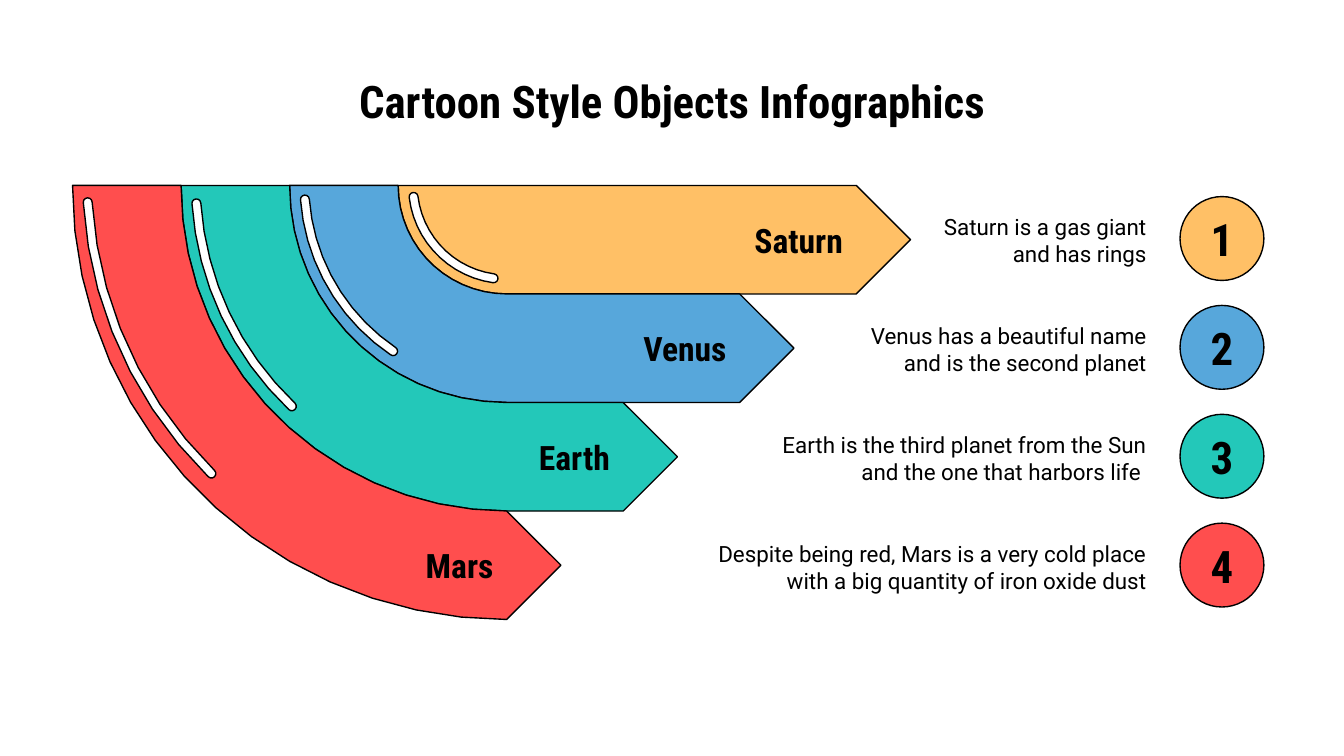
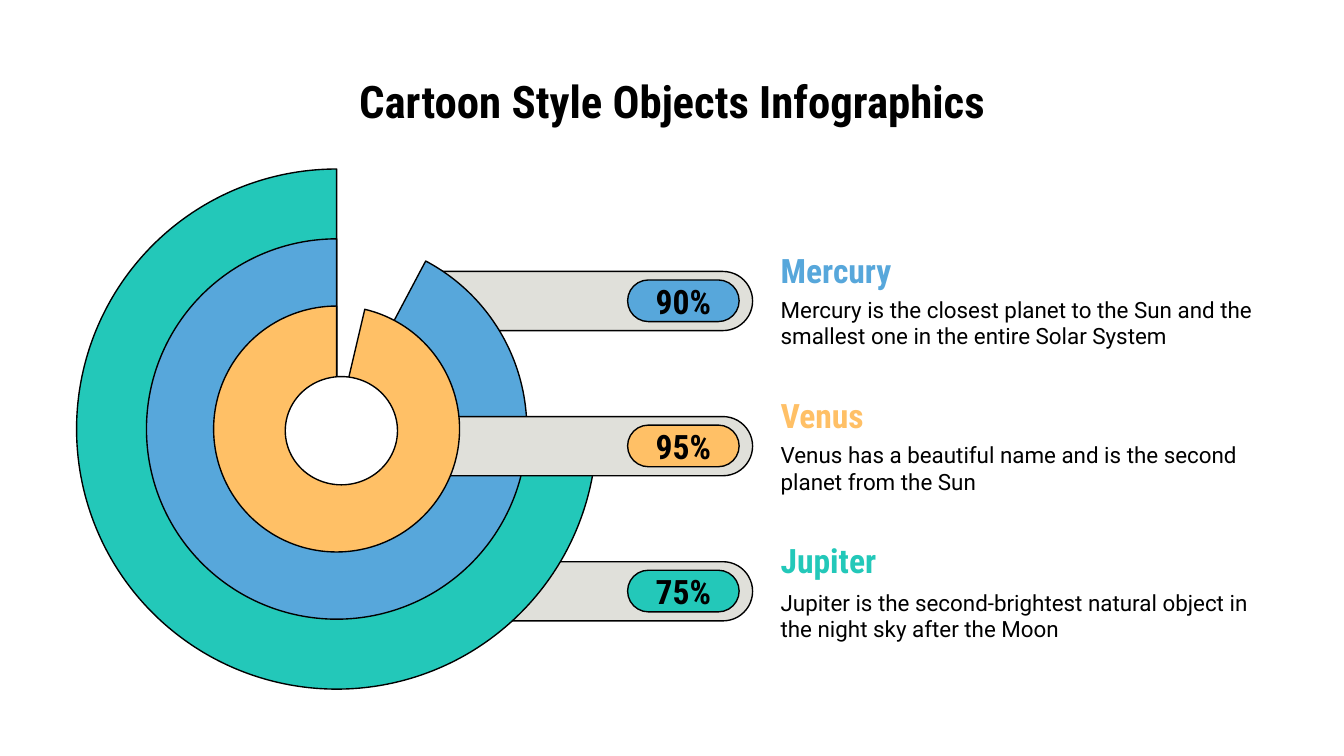
from dataclasses import dataclass
from math import ceil, cos, pi, radians, sin

from pptx import Presentation
from pptx.dml.color import RGBColor
from pptx.enum import shapes, text
from pptx.util import Emu, Inches, Pt

# The slide is a grid of 100 columns; rows are as tall as columns are wide.
WIDTH = Inches(10)
HEIGHT = Inches(5.625)
UNIT = WIDTH / 100

COLORS = {
    "ink": "000000",
    "paper": "FFFFFF",
    "bar": "E0E0DA",
    "yellow": "FFC066",
    "blue": "57A7DB",
    "teal": "23C8B9",
    "red": "FF4E4E",
}
FONTS = {
    "title": {"name": "Roboto Condensed", "size": Pt(24), "bold": True},
    "label": {"name": "Roboto Condensed", "size": Pt(18), "bold": True},
    "body": {"name": "Roboto", "size": Pt(12), "bold": False},
}
FRAME = {
    "word_wrap": True,
    "margin_left": Inches(0.1),
    "margin_right": Inches(0.1),
    "margin_top": Inches(0.1),
    "margin_bottom": Inches(0.1),
}
LEFT, CENTER, RIGHT = text.PP_ALIGN.LEFT, text.PP_ALIGN.CENTER, text.PP_ALIGN.RIGHT
TOP, MIDDLE = text.MSO_ANCHOR.TOP, text.MSO_ANCHOR.MIDDLE
Point = tuple[float, float]


@dataclass(frozen=True)
class Box:
    left: float
    top: float
    width: float
    height: float

    def emu(self) -> list[Emu]:
        return [Emu(round(n * UNIT)) for n in (self.left, self.top, self.width, self.height)]


@dataclass(frozen=True)
class Arrow:
    """A curved arrow; its glint runs between two angles and drifts inwards."""
    planet: str
    fact: str
    fact_width: float
    color: str
    glint_from: float
    glint_to: float
    drift: float


@dataclass(frozen=True)
class Ring:
    planet: str
    share: str
    fact: str
    color: str
    row: int
    diameter: float
    start_angle: float
    bar_left: float
    fact_drop: float


ARROWS = [
    Arrow("Saturn", "Saturn is a gas giant and has rings", 18.5, "yellow", 7, 82, 0),
    Arrow("Venus", "Venus has a beautiful name and is the second planet",
          23.2, "blue", 4, 55.6, 0.1),
    Arrow("Earth", "Earth is the third planet from the Sun and the one that harbors life ",
          29.4, "teal", 3.3, 45.8, 0.2),
    Arrow("Mars", "Despite being red, Mars is a very cold place with a big quantity "
          "of iron oxide dust", 35.4, "red", 2.3, 44.3, 0.5),
]
ARC_CENTER: Point = (37.7, 13.8)
ARC_RADIUS = 32.3
ARC_STEP = 6
BAND = ARC_RADIUS / len(ARROWS)
SHAFT_STEP = 8.67
GLINT_INSET = 1.1
GLINT_HALF = 0.33

# Listed from back to front.
RINGS = [
    Ring("Jupiter", "75%", "Jupiter is the second-brightest natural object in the night sky "
         "after the Moon", "teal", 2, 38.7, 0, 31.4, 1),
    Ring("Mercury", "90%", "Mercury is the closest planet to the Sun and the smallest one "
         "in the entire Solar System", "blue", 0, 28.3, 297.93, 30.6, 0.8),
    Ring("Venus", "95%", "Venus has a beautiful name and is the second planet from the Sun",
         "yellow", 1, 18.3, 283.25, 31.4, 0.8),
]
RING_CENTER: Point = (25.05, 31.93)
BAR_TOP, BAR_STEP, BAR_RIGHT, BAR_HEIGHT = 20.2, 10.8, 56, 4.4
TEXT_LEFT = 57.1


def rgb(color: str) -> RGBColor:
    return RGBColor.from_string(COLORS[color])


def paint(figure, color: str):
    figure.shadow.inherit = False
    figure.fill.solid()
    figure.fill.fore_color.rgb = rgb(color)
    figure.line.color.rgb = rgb("ink")
    figure.line.width = Pt(0.75)
    return figure


def write(figure, words: str, font: str, align=LEFT, anchor=TOP, color: str = "ink") -> None:
    frame = figure.text_frame
    for key, value in FRAME.items():
        setattr(frame, key, value)
    frame.vertical_anchor = anchor
    paragraph = frame.paragraphs[0]
    paragraph.alignment = align
    run = paragraph.add_run()
    run.text = words
    for key, value in FONTS[font].items():
        setattr(run.font, key, value)
    run.font.color.rgb = rgb(color)


def add_words(slide, box: Box, words: str, font: str, **layout) -> None:
    write(slide.shapes.add_textbox(*box.emu()), words, font, **layout)


def add_preset(slide, kind, box: Box, color: str, adjust: tuple[float, ...] = ()):
    figure = paint(slide.shapes.add_shape(kind, *box.emu()), color)
    for index, value in enumerate(adjust):
        figure.adjustments[index] = value
    return figure


def add_outline(slide, points: list[Point], color: str) -> None:
    corners = [(round(x * UNIT), round(y * UNIT)) for x, y in points]
    builder = slide.shapes.build_freeform(*corners[0], scale=1.0)
    builder.add_line_segments(corners[1:], close=True)
    paint(builder.convert_to_shape(), color)


def sweep(radius: float, end_radius: float, start: float, end: float) -> list[Point]:
    """Points round ARC_CENTER; angles run from its left side down to its foot."""
    if radius == end_radius == 0:
        return [ARC_CENTER]
    steps = ceil(abs(end - start) / ARC_STEP)
    points = []
    for i in range(steps + 1):
        part = i / steps
        r = radius + (end_radius - radius) * part
        angle = radians(start + (end - start) * part)
        points.append((ARC_CENTER[0] - r * cos(angle), ARC_CENTER[1] + r * sin(angle)))
    return points


def cap(radius: float, degrees: float, side: int) -> list[Point]:
    """Half circle that rounds a glint: side 1 at its end, -1 at its start."""
    angle = radians(degrees)
    x, y = ARC_CENTER[0] - radius * cos(angle), ARC_CENTER[1] + radius * sin(angle)
    points = []
    for i in range(1, 6):
        turn = pi * i / 6
        out, along = side * GLINT_HALF * cos(turn), side * GLINT_HALF * sin(turn)
        points.append((x - out * cos(angle) + along * sin(angle),
                       y + out * sin(angle) + along * cos(angle)))
    return points


def add_glint(slide, arrow: Arrow, radius: float) -> None:
    first = radius - GLINT_INSET
    last = first - arrow.drift
    start, end = arrow.glint_from, arrow.glint_to
    add_outline(slide, [
        *sweep(first + GLINT_HALF, last + GLINT_HALF, start, end),
        *cap(last, end, 1),
        *sweep(last - GLINT_HALF, first - GLINT_HALF, end, start),
        *cap(first, start, -1),
    ], "paper")


def add_arrow(slide, arrow: Arrow, index: int) -> None:
    inner, outer = index * BAND, (index + 1) * BAND
    x, y = ARC_CENTER
    shaft_end = x + (len(ARROWS) - 1 - index) * SHAFT_STEP
    add_outline(slide, [
        *sweep(outer, outer, 0, 90),
        (shaft_end, y + outer),
        (shaft_end + BAND / 2, y + inner + BAND / 2),
        (shaft_end, y + inner),
        *sweep(inner, inner, 90, 0),
    ], arrow.color)
    add_glint(slide, arrow, outer)
    add_words(slide, Box(shaft_end - 9.3, y + inner, 9.3, BAND), arrow.planet, "label",
              align=RIGHT, anchor=MIDDLE)

    badge_top = 14.63 + index * 8.1
    badge = add_preset(slide, shapes.MSO_SHAPE.OVAL, Box(87.8, badge_top, 6.24, 6.24),
                       arrow.color)
    write(badge, str(index + 1), "title", CENTER, MIDDLE)
    add_words(slide, Box(86.3 - arrow.fact_width, badge_top + 0.25, arrow.fact_width, 5.7),
              arrow.fact, "body", align=RIGHT)


def add_bar(slide, ring: Ring) -> None:
    top = BAR_TOP + ring.row * BAR_STEP
    rounded = shapes.MSO_SHAPE.ROUNDED_RECTANGLE
    add_preset(slide, rounded, Box(ring.bar_left, top, BAR_RIGHT - ring.bar_left, BAR_HEIGHT),
               "bar", (0.5,))
    pill = add_preset(slide, rounded, Box(46.7, top + 0.63, 8.3, 3.1), ring.color, (0.5,))
    write(pill, ring.share, "label", CENTER, MIDDLE)
    add_words(slide, Box(TEXT_LEFT, top - 2, 21.2, 3.8), ring.planet, "label",
              anchor=MIDDLE, color=ring.color)
    add_words(slide, Box(TEXT_LEFT, top + ring.fact_drop, 37.9, 5.5), ring.fact, "body")


def centered(width: float, height: float, center: Point) -> Box:
    return Box(center[0] - width / 2, center[1] - height / 2, width, height)


def add_ring(slide, ring: Ring) -> None:
    # Pie angles count 60000 to a degree, adjustments 100000 to one.
    angles = (ring.start_angle * 0.6, 270 * 0.6)
    add_preset(slide, shapes.MSO_SHAPE.PIE,
               centered(ring.diameter, ring.diameter, RING_CENTER), ring.color, angles)


def add_titled_slide(deck):
    slide = deck.slides.add_slide(deck.slide_layouts[6])
    slide.background.fill.solid()
    slide.background.fill.fore_color.rgb = rgb("paper")
    add_words(slide, Box(5, 4.5, 90, 6.3), "Cartoon Style Objects Infographics", "title",
              align=CENTER)
    return slide


def add_arrows_slide(deck) -> None:
    slide = add_titled_slide(deck)
    for index, arrow in enumerate(ARROWS):
        add_arrow(slide, arrow, index)


def add_rings_slide(deck) -> None:
    slide = add_titled_slide(deck)
    jupiter, mercury, venus = RINGS
    for layer in ((jupiter, mercury), (venus,)):
        for ring in layer:
            add_bar(slide, ring)
        for ring in layer:
            add_ring(slide, ring)
    add_preset(slide, shapes.MSO_SHAPE.OVAL, centered(8.35, 8.05, (25.4, 32.05)), "paper")


def main() -> None:
    deck = Presentation()
    deck.slide_width, deck.slide_height = WIDTH, HEIGHT
    add_arrows_slide(deck)
    add_rings_slide(deck)
    deck.save("out.pptx")


if __name__ == "__main__":
    main()
